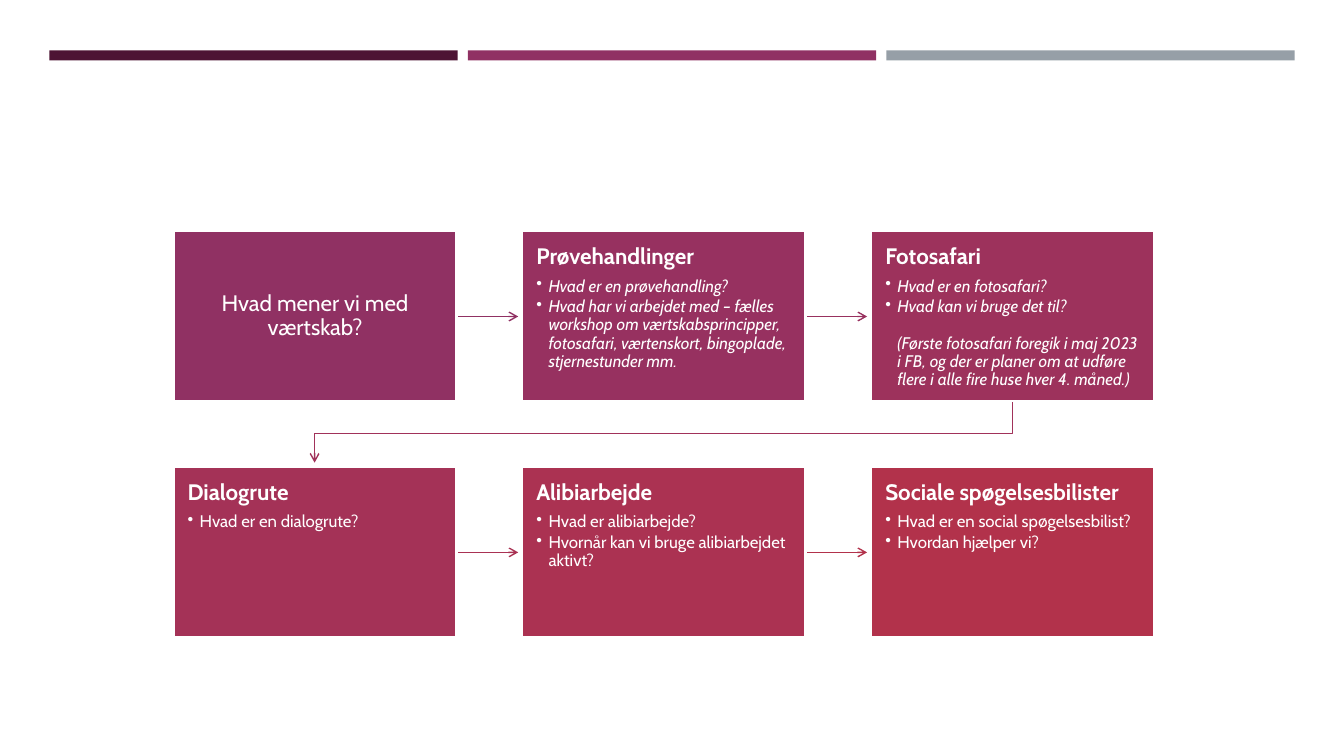
from dataclasses import dataclass

from lxml.etree import SubElement
from pptx import Presentation
from pptx.dml.color import RGBColor as Rgb
from pptx.enum.shapes import MSO_CONNECTOR as Link, MSO_SHAPE as Form
from pptx.enum.text import MSO_ANCHOR as Anchor, PP_ALIGN as Align
from pptx.oxml.ns import qn
from pptx.shapes.autoshape import Shape
from pptx.shapes.base import BaseShape
from pptx.shapes.shapetree import SlideShapes
from pptx.text.text import _Paragraph as Para
from pptx.util import Emu, Pt

PX = 9144
LEFT, TOP, WIDE, HIGH = 172, 229, 281, 169
STEP_X, STEP_Y, COLS = 346, 234, 3
REACH = 61
PAD, DENT = 14, 12


@dataclass
class Card:
    """A step of the process, with the colour of the arrow that leaves it."""
    fill: str
    arrow: str
    title: str
    items: tuple[str, ...] = ()
    slant: bool = False


BARS = ("4D1434", "903163", "969FA7")
CARDS = (
    Card("903163", "903163", "Hvad mener vi med værtskab?"),
    Card("973160", "98315F", "Prøvehandlinger", (
        "Hvad er en prøvehandling?",
        "Hvad har vi arbejdet med – fælles workshop om værtskabsprincipper, "
        "fotosafari, værtenskort, bingoplade, stjernestunder mm."), True),
    Card("9D325C", "A1325A", "Fotosafari", (
        "Hvad er en fotosafari?",
        "Hvad kan vi bruge det til?\n\n(Første fotosafari foregik i maj 2023 i FB, "
        "og der er planer om at udføre flere i alle fire huse hver 4. måned.)"), True),
    Card("A43257", "A93253", "Dialogrute", ("Hvad er en dialogrute?",)),
    Card("AB3252", "B2324B", "Alibiarbejde", (
        "Hvad er alibiarbejde?", "Hvornår kan vi bruge alibiarbejdet aktivt?")),
    Card("B2324B", "", "Sociale spøgelsesbilister", (
        "Hvad er en social spøgelsesbilist?", "Hvordan hjælper vi?")),
)


def px(num: int) -> Emu:
    """Turn pixels into EMU."""
    return Emu(num * PX)


def tint(code: str) -> Rgb:
    """Turn a hex string into a colour."""
    return Rgb.from_string(code)


def spot(rank: int) -> tuple[int, int]:
    """Give the left and top of a card."""
    row, col = divmod(rank, COLS)
    return LEFT + col * STEP_X, TOP + row * STEP_Y


def block(shapes: SlideShapes, x: int, y: int, w: int, h: int, fill: str) -> Shape:
    """Draw a flat rectangle without a line."""
    shape = shapes.add_shape(Form.RECTANGLE, px(x), px(y), px(w), px(h))
    shape.shadow.inherit = False
    shape.fill.solid()
    shape.fill.fore_color.rgb = tint(fill)
    shape.line.fill.background()
    return shape


def point(shape: BaseShape, code: str) -> None:
    """Style a line as a thin arrow without shadow."""
    shape.line.color.rgb = tint(code)
    shape.line.width = Pt(1)
    props = shape.element.spPr
    SubElement(props.find(qn("a:ln")), qn("a:tailEnd"), type="arrow")
    SubElement(props, qn("a:effectLst"))


def arrow(shapes: SlideShapes, rank: int, code: str) -> None:
    """Lead from a card to the next one, bending where the row ends."""
    x, y = spot(rank)
    if (rank + 1) % COLS:
        mid = px(y + HIGH // 2 + 1)
        line = shapes.add_connector(
            Link.STRAIGHT, px(x + WIDE), mid, px(x + WIDE + REACH), mid)
    else:
        base, half = y + HIGH, WIDE // 2
        turn, end = base + 32, LEFT + half
        pen = shapes.build_freeform(x + half, base, PX)
        pen.add_line_segments(
            [(x + half, turn), (end, turn), (end, base + REACH)], close=False)
        line = pen.convert_to_shape()
        line.fill.background()
    point(line, code)


def style(para: Para, size: int, gap: float, bold: bool, slant: bool) -> None:
    """Set the spacing and font of a paragraph."""
    para.line_spacing = 0.9
    para.space_after = Pt(gap)
    font = para.font
    font.name, font.size = "Cabin", Pt(size)
    font.bold, font.italic = bold, slant
    font.color.rgb = tint("FFFFFF")


def bullet(para: Para) -> None:
    """Give a paragraph a hanging bullet."""
    props = para._p.get_or_add_pPr()
    props.set("marL", str(px(DENT)))
    props.set("indent", str(px(-DENT)))
    SubElement(props, qn("a:buChar"), char="•")


def draw(shapes: SlideShapes, rank: int, card: Card) -> None:
    """Draw a card with its title and items."""
    shape = block(shapes, *spot(rank), WIDE, HIGH, card.fill)
    shape.line.color.rgb = tint("FFFFFF")
    shape.line.width = Pt(1.75)
    frame = shape.text_frame
    frame.word_wrap = True
    frame.margin_left = frame.margin_right = px(PAD)
    frame.margin_top = frame.margin_bottom = px(PAD)
    frame.vertical_anchor = Anchor.TOP if card.items else Anchor.MIDDLE
    head = frame.paragraphs[0]
    head.text = card.title
    head.alignment = Align.LEFT if card.items else Align.CENTER
    style(head, 16, 6, bool(card.items), False)
    for item in card.items:
        para = frame.add_paragraph()
        para.text = item
        para.alignment = Align.LEFT
        bullet(para)
        style(para, 12, 1.8, False, card.slant)


def main() -> None:
    """Build and save the slide."""
    deck = Presentation()
    deck.slide_width, deck.slide_height = px(1333), px(750)
    shapes = deck.slides.add_slide(deck.slide_layouts[6]).shapes
    for col, fill in enumerate(BARS):
        block(shapes, 49 + col * 415, 50, 405, 10, fill)
    for rank, card in enumerate(CARDS[:-1]):
        arrow(shapes, rank, card.arrow)
    for rank, card in enumerate(CARDS):
        draw(shapes, rank, card)
    deck.save("out.pptx")


if __name__ == "__main__":
    main()
